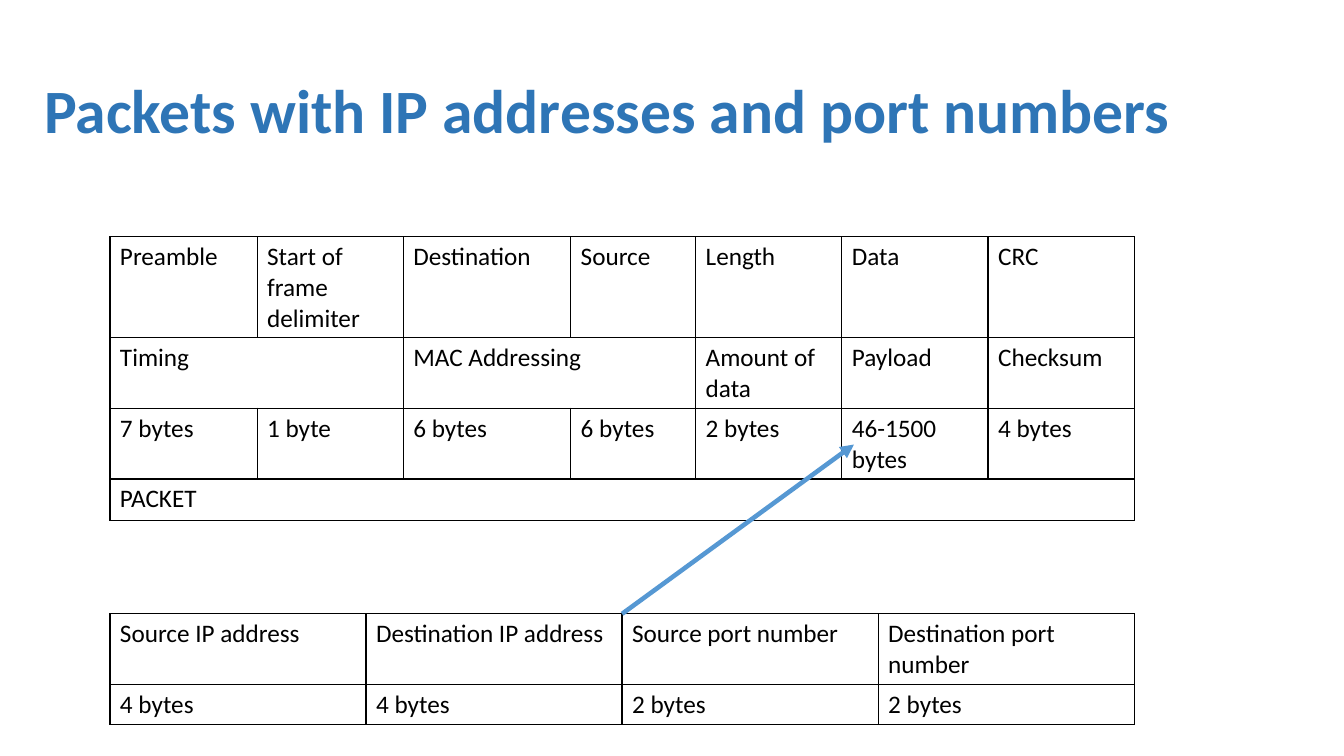
from dataclasses import dataclass

from lxml.etree import SubElement
from pptx import Presentation
from pptx.dml.color import RGBColor
from pptx.enum.shapes import MSO_CONNECTOR
from pptx.enum.text import MSO_ANCHOR
from pptx.oxml.ns import qn
from pptx.slide import Slide
from pptx.table import _Cell
from pptx.text.text import TextFrame
from pptx.util import Inches, Pt


@dataclass(frozen=True)
class Theme:
    font: str = "Calibri"
    title_size: float = 44
    cell_size: float = 18
    border_width: float = 1
    arrow_width: float = 3.25
    title: str = "2E75B6"
    ink: str = "000000"
    arrow: str = "5698D3"


@dataclass(frozen=True)
class Grid:
    """A table in inches; None marks a cell merged into the one on its left."""
    left: float
    top: float
    columns: list[float]
    rows: list[float]
    texts: list[list[str | None]]


THEME = Theme()
TABLE_LEFT = 1.09
ADDRESS_TOP = 6.09

FRAME_GRID = Grid(
    TABLE_LEFT, 2.35,
    [1.46, 1.45, 1.66, 1.24, 1.45, 1.45, 1.45],
    [1, 0.7, 0.7, 0.41],
    [
        ["Preamble", "Start of frame delimiter", "Destination", "Source", "Length", "Data", "CRC"],
        ["Timing", None, "MAC Addressing", None, "Amount of data", "Payload", "Checksum"],
        ["7 bytes", "1 byte", "6 bytes", "6 bytes", "2 bytes", "46-1500 bytes", "4 bytes"],
        ["PACKET"] + [None] * 6,
    ],
)
ADDRESS_GRID = Grid(
    TABLE_LEFT, ADDRESS_TOP,
    [2.54] * 4,
    [0.6, 0.35],
    [
        ["Source IP address", "Destination IP address", "Source port number", "Destination port number"],
        ["4 bytes", "4 bytes", "2 bytes", "2 bytes"],
    ],
)


def write_text(frame: TextFrame, text: str, *, size: float, color: str,
               bold: bool = False, line_spacing: float = 1.0) -> None:
    paragraph = frame.paragraphs[0]
    paragraph.line_spacing = line_spacing
    run = paragraph.add_run()
    run.text = text
    run.font.name = THEME.font
    run.font.size = Pt(size)
    run.font.bold = bold
    run.font.color.rgb = RGBColor.from_string(color)


def add_title(slide: Slide, text: str) -> None:
    box = slide.shapes.add_textbox(Inches(0.34), Inches(0.4), Inches(12.68), Inches(1.45))
    frame = box.text_frame
    frame.word_wrap = True
    frame.vertical_anchor = MSO_ANCHOR.MIDDLE
    write_text(frame, text, size=THEME.title_size, color=THEME.title, bold=True, line_spacing=0.9)


def outline_cell(cell: _Cell) -> None:
    properties = cell._tc.get_or_add_tcPr()
    for side in ("lnL", "lnR", "lnT", "lnB"):
        line = SubElement(properties, qn(f"a:{side}"), w=str(Pt(THEME.border_width)))
        fill = SubElement(line, qn("a:solidFill"))
        SubElement(fill, qn("a:srgbClr"), val=THEME.ink)
    cell.fill.background()


def add_grid(slide: Slide, grid: Grid) -> None:
    table = slide.shapes.add_table(
        len(grid.rows), len(grid.columns), Inches(grid.left), Inches(grid.top),
        Inches(sum(grid.columns)), Inches(sum(grid.rows)),
    ).table
    table.first_row = False
    table.horz_banding = False
    for column, width in zip(table.columns, grid.columns):
        column.width = Inches(width)
    for row, height in zip(table.rows, grid.rows):
        row.height = Inches(height)

    for row_index, texts in enumerate(grid.texts):
        for column_index, text in enumerate(texts):
            cell = table.cell(row_index, column_index)
            outline_cell(cell)
            if text is None:
                continue
            write_text(cell.text_frame, text, size=THEME.cell_size, color=THEME.ink)
            last = column_index
            while last + 1 < len(texts) and texts[last + 1] is None:
                last += 1
            if last > column_index:
                cell.merge(table.cell(row_index, last))


def add_arrow(slide: Slide, start: tuple[float, float], end: tuple[float, float]) -> None:
    points = [Inches(value) for value in (*start, *end)]
    arrow = slide.shapes.add_connector(MSO_CONNECTOR.STRAIGHT, *points)
    arrow.line.color.rgb = RGBColor.from_string(THEME.arrow)
    arrow.line.width = Pt(THEME.arrow_width)
    SubElement(arrow.line._get_or_add_ln(), qn("a:tailEnd"), type="triangle")
    SubElement(arrow._element.spPr, qn("a:effectLst"))


def main() -> None:
    presentation = Presentation()
    presentation.slide_width = Inches(13.33)
    presentation.slide_height = Inches(7.5)
    slide = presentation.slides.add_slide(presentation.slide_layouts[6])
    add_title(slide, "Packets with IP addresses and port numbers")
    add_grid(slide, FRAME_GRID)
    add_grid(slide, ADDRESS_GRID)
    add_arrow(slide, (6.17, ADDRESS_TOP), (8.47, 4.41))
    presentation.save("out.pptx")


if __name__ == "__main__":
    main()
